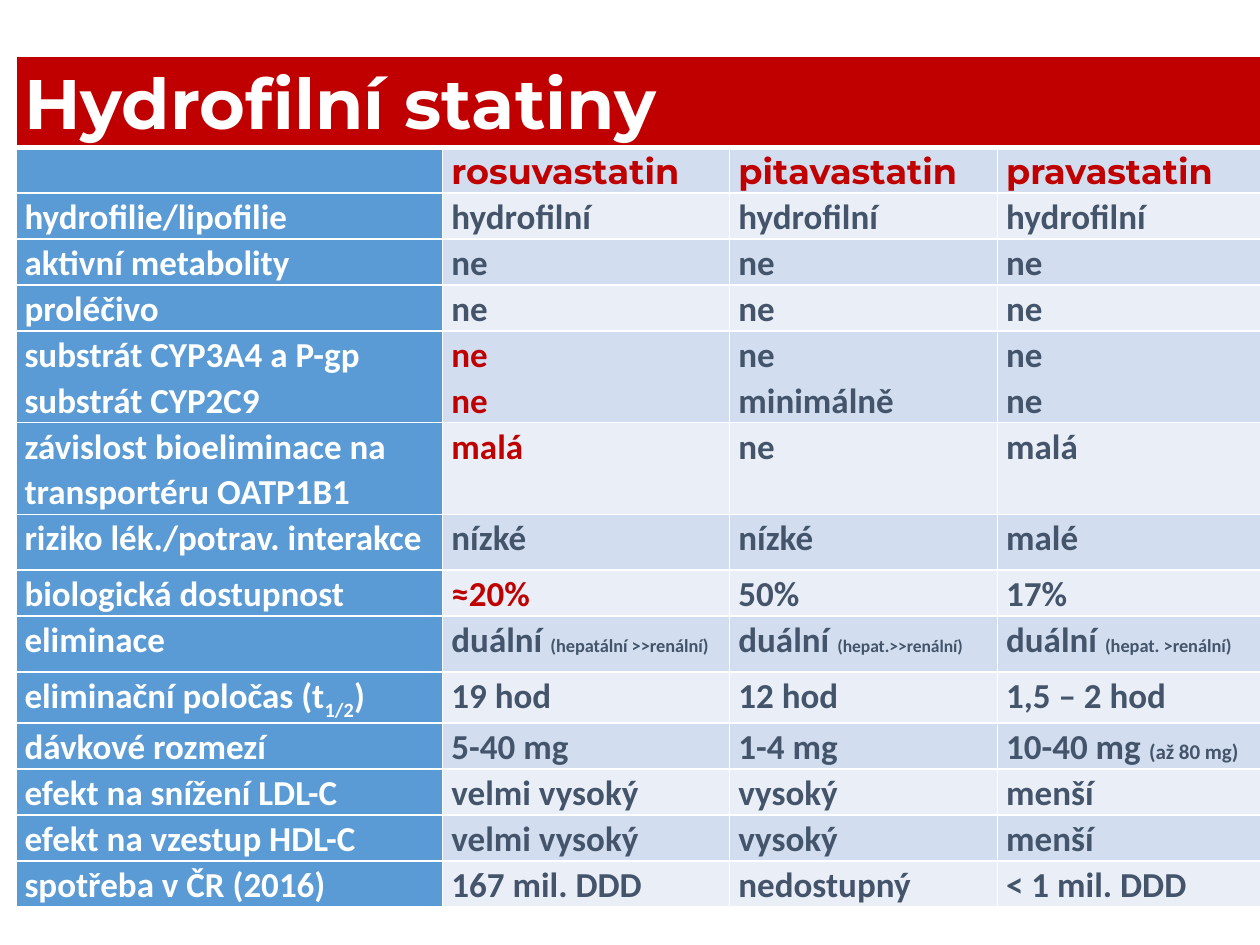
from pptx import Presentation
from pptx.dml.color import RGBColor
from pptx.oxml import parse_xml
from pptx.oxml.ns import nsdecls
from pptx.util import Pt

WHITE = RGBColor(0xFF, 0xFF, 0xFF)
RED = RGBColor(0xC0, 0x00, 0x00)
BLUE = RGBColor(0x5B, 0x9B, 0xD5)
SLATE = RGBColor(0x44, 0x54, 0x6A)
BANDS = RGBColor(0xD2, 0xDE, 0xEF), RGBColor(0xEA, 0xEF, 0xF7)

TITLE = "Hydrofilní statiny"
ROWS = [
    ["", "rosuvastatin", "pitavastatin", "pravastatin"],
    ["hydrofilie/lipofilie", "hydrofilní", "hydrofilní", "hydrofilní"],
    ["aktivní metabolity", "ne", "ne", "ne"],
    ["proléčivo", "ne", "ne", "ne"],
    ["substrát CYP3A4 a P-gp\nsubstrát CYP2C9", "ne\nne", "ne\nminimálně", "ne\nne"],
    ["závislost bioeliminace na transportéru OATP1B1", "malá", "ne", "malá"],
    ["riziko lék./potrav. interakce", "nízké", "nízké", "malé"],
    ["biologická dostupnost", "≈20%", "50%", "17%"],
    ["eliminace", "duální ", "duální ", "duální "],
    ["eliminační poločas (t", "19 hod", "12 hod", "1,5 – 2 hod"],
    ["dávkové rozmezí", "5-40 mg", "1-4 mg", "10-40 mg "],
    ["efekt na snížení LDL-C", "velmi vysoký", "vysoký", "menší"],
    ["efekt na vzestup HDL-C", "velmi vysoký", "vysoký", "menší"],
    ["spotřeba v ČR (2016)", "167 mil. DDD", "nedostupný", "< 1 mil. DDD"],
]
TAILS = {
    (9, 1): [("(hepatální >>renální)", 10.5, 0)],
    (9, 2): [("(hepat.>>renální)", 10, 0)],
    (9, 3): [("(hepat. >renální)", 10.5, 0)],
    (10, 0): [("1/2", 20, -25000), (")", 20, 0)],
    (11, 3): [("(až 80 mg)", 12, 0)],
}
RED_ROWS = {5, 6, 8}
WIDTHS = [244, 164, 153, 150.5]
TALL = {0: 35.3, 5: 52.5, 6: 52.5, 7: 31.7, 9: 32.2}
STEP = 26.2


class Deck:
    head = {"name": "Montserrat", "bold": True}
    body = {"name": "Calibri", "bold": True}
    inset = {"margin_left": Pt(5), "margin_right": Pt(5),
             "margin_top": 0, "margin_bottom": 0}

    def __init__(self, wide, high):
        self.file = Presentation()
        self.file.slide_width, self.file.slide_height = Pt(wide), Pt(high)
        self.slide = self.file.slides.add_slide(self.file.slide_layouts[6])

    def grid(self, left, top, widths, heights):
        frame = self.slide.shapes.add_table(
            len(heights), len(widths), Pt(left), Pt(top),
            Pt(sum(widths)), Pt(sum(heights)))
        for col, width in zip(frame.table.columns, widths):
            col.width = Pt(width)
        for row, height in zip(frame.table.rows, heights):
            row.height = Pt(height)
        return frame.table

    def run(self, para, text, style, size, color, base=0):
        run = para.add_run()
        run.text = text
        for key, value in {**style, "size": Pt(size)}.items():
            setattr(run.font, key, value)
        run.font.color.rgb = color
        if base:
            run.font._element.set("baseline", str(base))

    def edge(self, cell, bottom=1):
        props = cell._tc.get_or_add_tcPr()
        sides = {"L": 1, "R": 1, "T": 1, "B": bottom}
        for spot, (side, width) in enumerate(sides.items()):
            props.insert(spot, parse_xml(
                f'<a:ln{side} {nsdecls("a")} w="{Pt(width)}"><a:solidFill>'
                f'<a:srgbClr val="{WHITE}"/></a:solidFill></a:ln{side}>'))

    def cell(self, cell, text, style, size, color, fill, tail=(), bottom=1):
        for key, value in self.inset.items():
            setattr(cell, key, value)
        cell.fill.solid()
        cell.fill.fore_color.rgb = fill
        self.edge(cell, bottom)
        frame = cell.text_frame
        for i, line in enumerate(text.split("\n")):
            para = frame.add_paragraph() if i else frame.paragraphs[0]
            para.line_spacing = 1.07
            if line:
                self.run(para, line, style, size, color)
        for part, small, base in tail:
            self.run(para, part, style, small, color, base)

    def save(self):
        self.file.save("out.pptx")


def main():
    deck = Deck(720, 540)
    heights = [TALL.get(r, STEP) for r in range(len(ROWS) + 1)]
    table = deck.grid(9, 32, WIDTHS, heights)
    for c in range(len(WIDTHS)):
        deck.cell(table.cell(0, c), "" if c else TITLE, deck.head, 40,
                  WHITE, RED, bottom=3)
    table.cell(0, 0).merge(table.cell(0, len(WIDTHS) - 1))
    for r, row in enumerate(ROWS, 1):
        for c, text in enumerate(row):
            style = deck.head if r == 1 else deck.body
            hot = r == 1 or (c == 1 and r in RED_ROWS)
            color = WHITE if c == 0 else RED if hot else SLATE
            fill = BANDS[(r - 1) % 2] if c else BLUE
            deck.cell(table.cell(r, c), text, style, 20, color, fill,
                      TAILS.get((r, c), ()))
    deck.save()


if __name__ == "__main__":
    main()
